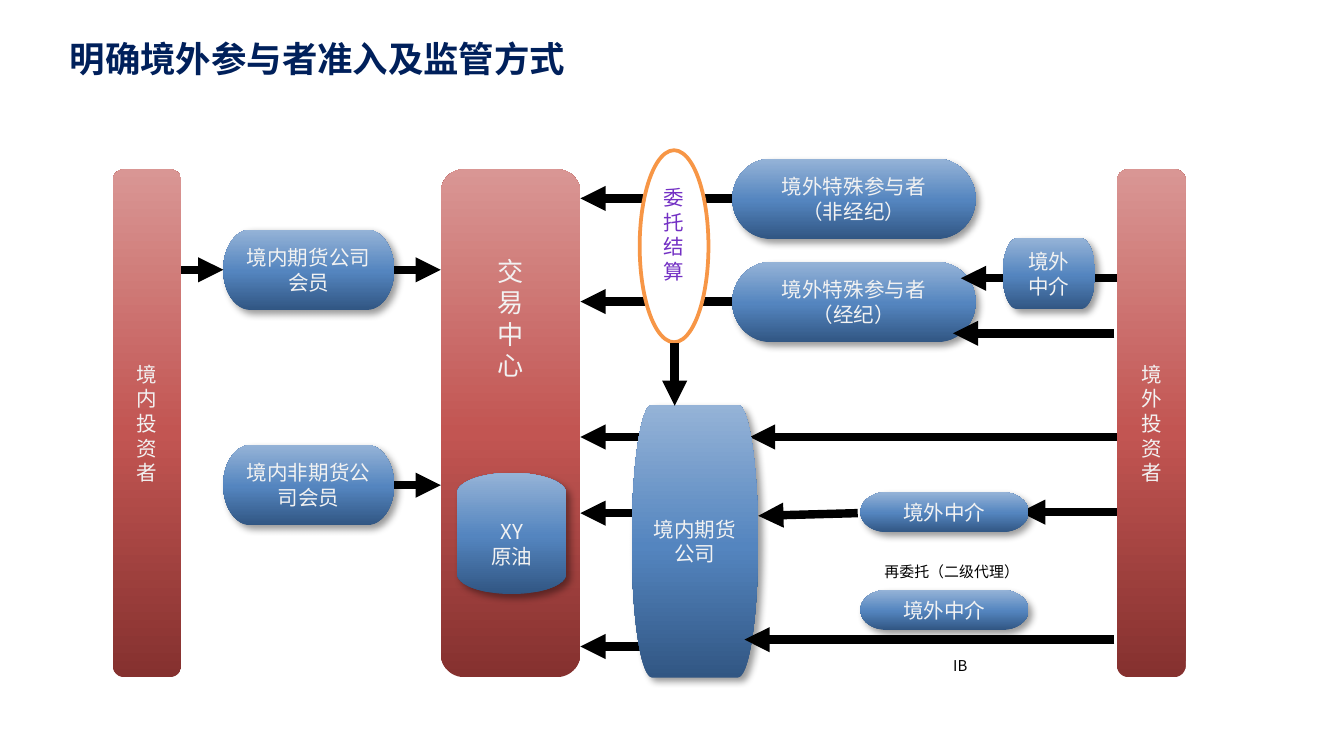
from copy import deepcopy
from dataclasses import dataclass

from lxml.etree import SubElement
from pptx import Presentation
from pptx.dml.color import RGBColor
from pptx.enum.shapes import MSO_CONNECTOR, MSO_SHAPE
from pptx.enum.text import MSO_ANCHOR, PP_ALIGN
from pptx.oxml.ns import qn
from pptx.util import Cm, Pt

BODY_FONT = "Noto Sans CJK SC"
LIGHT, BLACK, NAVY, PURPLE = "F2F2F2", "000000", "00205B", "7330C4"
RED = ("85312F", "C25552", "D99694")
BLUE = ("315683", "5485BF", "95B3D7")
STOP_POSITIONS = (0, 0.48, 1)

PILL = MSO_SHAPE.FLOWCHART_TERMINATOR
BAR = MSO_SHAPE.ROUNDED_RECTANGLE
DISK = MSO_SHAPE.FLOWCHART_MAGNETIC_DISK


@dataclass(frozen=True)
class Node:
    kind: MSO_SHAPE
    left: float
    top: float
    width: float
    height: float
    lines: tuple[str, ...] = ()
    gradient: tuple[str, str, str] = BLUE


@dataclass(frozen=True)
class Label:
    left: float
    top: float
    width: float
    height: float
    lines: tuple[str, ...]
    size: float
    color: str = BLACK
    line_spacing: float | None = None


@dataclass(frozen=True)
class Arrow:
    x1: float
    y1: float
    x2: float
    y2: float


EXCHANGE = Node(BAR, 8.33, 3.2, 2.64, 9.6, gradient=RED)
PRODUCT = Node(DISK, 8.64, 8.94, 2.06, 2.29, ("XY", "原油"))
COMPANY = Node(PILL, 11.94, 7.65, 2.39, 5.16, ("境内期货", "公司"))
SMALL_INTERMEDIARY = Node(PILL, 18.95, 4.5, 1.75, 1.35, ("境外中介",))
PARTICIPANTS = [
    Node(PILL, 13.84, top, 4.6, 1.52, ("境外特殊参与者", kind))
    for top, kind in ((3.0, "（非经纪）"), (4.95, "（经纪）"))
]
MEMBERS = [
    Node(PILL, 4.22, top, 3.23, 1.52, (name,))
    for top, name in ((4.34, "境内期货公司会员"), (8.41, "境内非期货公司会员"))
]
INVESTORS = [
    Node(BAR, left, 3.2, 1.3, 9.6, (name,), RED)
    for left, name in ((2.13, "境内投资者"), (21.11, "境外投资者"))
]
INTERMEDIARIES = [Node(PILL, 16.26, top, 3.18, 0.76, ("境外中介",)) for top in (9.3, 11.15)]

EXCHANGE_EDGE = 10.97
LOWER_ARROWS = [
    Arrow(2.84, 5.1, 4.22, 5.1),
    *(Arrow(7.45, y, 8.33, y) for y in (5.1, 9.17)),
    *(Arrow(x, y, EXCHANGE_EDGE, y) for x, y in (
        (13.84, 3.75), (13.84, 5.7), (12.67, 8.26), (12.42, 9.7), (12.83, 12.22))),
    Arrow(21.18, 9.68, 19.28, 9.68),
    Arrow(16.21, 9.7, 14.33, 9.75),
    Arrow(21.16, 8.26, 14.17, 8.26),
    Arrow(21.21, 5.26, 18.16, 5.26),
    Arrow(21.06, 6.3, 18.01, 6.3),
]
UPPER_ARROWS = [Arrow(12.75, 6.48, 12.75, 7.67), Arrow(21.06, 12.09, 14.07, 12.09)]
LABELS = [
    Label(8.33, 5.44, 2.64, 1.14, tuple("交易中心"), 14, LIGHT),
    Label(15.49, 10.08, 5, 0.71, ("再委托（二级代理）",), 8, line_spacing=30),
    Label(15.65, 11.94, 5, 0.58, ("IB",), 8, line_spacing=30),
]


def rgb(value: str) -> RGBColor:
    return RGBColor.from_string(value)


def apply(target, values: dict) -> None:
    for name, value in values.items():
        setattr(target, name, value)


def write(frame, lines: tuple[str, ...], size: float, color: str, font_name: str = BODY_FONT,
          bold: bool = False, align=PP_ALIGN.CENTER, anchor=MSO_ANCHOR.MIDDLE,
          line_spacing: float | None = None) -> None:
    apply(frame, {"word_wrap": True, "vertical_anchor": anchor})
    for index, line in enumerate(lines):
        paragraph = frame.paragraphs[0] if index == 0 else frame.add_paragraph()
        paragraph.alignment = align
        if line_spacing:
            paragraph.line_spacing = Pt(line_spacing)
        run = paragraph.add_run()
        run.text = line
        apply(run.font, {"name": font_name, "size": Pt(size), "bold": bold})
        run.font.color.rgb = rgb(color)
        SubElement(run.font._element, qn("a:ea"), typeface=font_name)


def fill_gradient(shape, colors: tuple[str, str, str]) -> None:
    """Fill with three stops running from the bottom to the top."""
    shape.fill.gradient()
    shape.fill.gradient_angle = 90
    stop_list = shape._element.spPr.find(".//" + qn("a:gsLst"))
    stop_list.append(deepcopy(stop_list[0]))
    for stop, color, position in zip(shape.fill.gradient_stops, colors, STOP_POSITIONS):
        stop.color.rgb = rgb(color)
        stop.position = position


def add_soft_shadow(shape) -> None:
    effects = shape._element.spPr.find(qn("a:effectLst"))
    shadow = SubElement(effects, qn("a:outerShdw"), blurRad=str(Pt(4)), dist=str(Pt(3)),
                        dir="2700000", algn="tl", rotWithShape="0")
    color = SubElement(shadow, qn("a:srgbClr"), val=BLACK)
    SubElement(color, qn("a:alpha"), val="40000")


def add_shape(slide, kind, *box: float):
    shape = slide.shapes.add_shape(kind, *map(Cm, box))
    shape.shadow.inherit = False
    return shape


def draw_node(slide, node: Node) -> None:
    shape = add_shape(slide, node.kind, node.left, node.top, node.width, node.height)
    fill_gradient(shape, node.gradient)
    shape.line.fill.background()
    if node.gradient == BLUE:
        add_soft_shadow(shape)
    write(shape.text_frame, node.lines, 11, LIGHT)


def draw_arrow(slide, arrow: Arrow) -> None:
    ends = map(Cm, (arrow.x1, arrow.y1, arrow.x2, arrow.y2))
    connector = slide.shapes.add_connector(MSO_CONNECTOR.STRAIGHT, *ends)
    connector.line.color.rgb = rgb(BLACK)
    connector.line.width = Pt(4.5)
    SubElement(connector.line._get_or_add_ln(), qn("a:tailEnd"), type="triangle")
    SubElement(connector._element.spPr, qn("a:effectLst"))


def draw_label(slide, label: Label) -> None:
    box = slide.shapes.add_textbox(*map(Cm, (label.left, label.top, label.width, label.height)))
    write(box.text_frame, label.lines, label.size, label.color, line_spacing=label.line_spacing)


def draw_title(slide) -> None:
    frame = slide.shapes.add_textbox(Cm(1.19), Cm(0.58), Cm(20.5), Cm(1.19)).text_frame
    apply(frame, {f"margin_{side}": Cm(0.13) for side in ("left", "right", "top", "bottom")})
    write(frame, ("明确境外参与者准入及监管方式",), 19, NAVY, "Cabin", True,
          PP_ALIGN.LEFT, MSO_ANCHOR.TOP)


def draw_settlement(slide) -> None:
    ellipse = add_shape(slide, MSO_SHAPE.OVAL, 12.09, 2.84, 1.3, 3.63)
    ellipse.fill.solid()
    ellipse.fill.fore_color.rgb = rgb("FFFFFF")
    ellipse.line.color.rgb = rgb("F79646")
    ellipse.line.width = Pt(2)
    write(ellipse.text_frame, ("委托结算",), 11, PURPLE, anchor=MSO_ANCHOR.TOP)


def main() -> None:
    presentation = Presentation()
    apply(presentation, {"slide_width": Cm(25.4), "slide_height": Cm(14.29)})
    slide = presentation.slides.add_slide(presentation.slide_layouts[6])
    draw_title(slide)
    for node in (EXCHANGE, PRODUCT, *PARTICIPANTS, *MEMBERS):
        draw_node(slide, node)
    for arrow in LOWER_ARROWS:
        draw_arrow(slide, arrow)
    for node in (*INVESTORS, *INTERMEDIARIES, COMPANY, SMALL_INTERMEDIARY):
        draw_node(slide, node)
    draw_settlement(slide)
    for arrow in UPPER_ARROWS:
        draw_arrow(slide, arrow)
    for label in LABELS:
        draw_label(slide, label)
    presentation.save("out.pptx")


if __name__ == "__main__":
    main()
